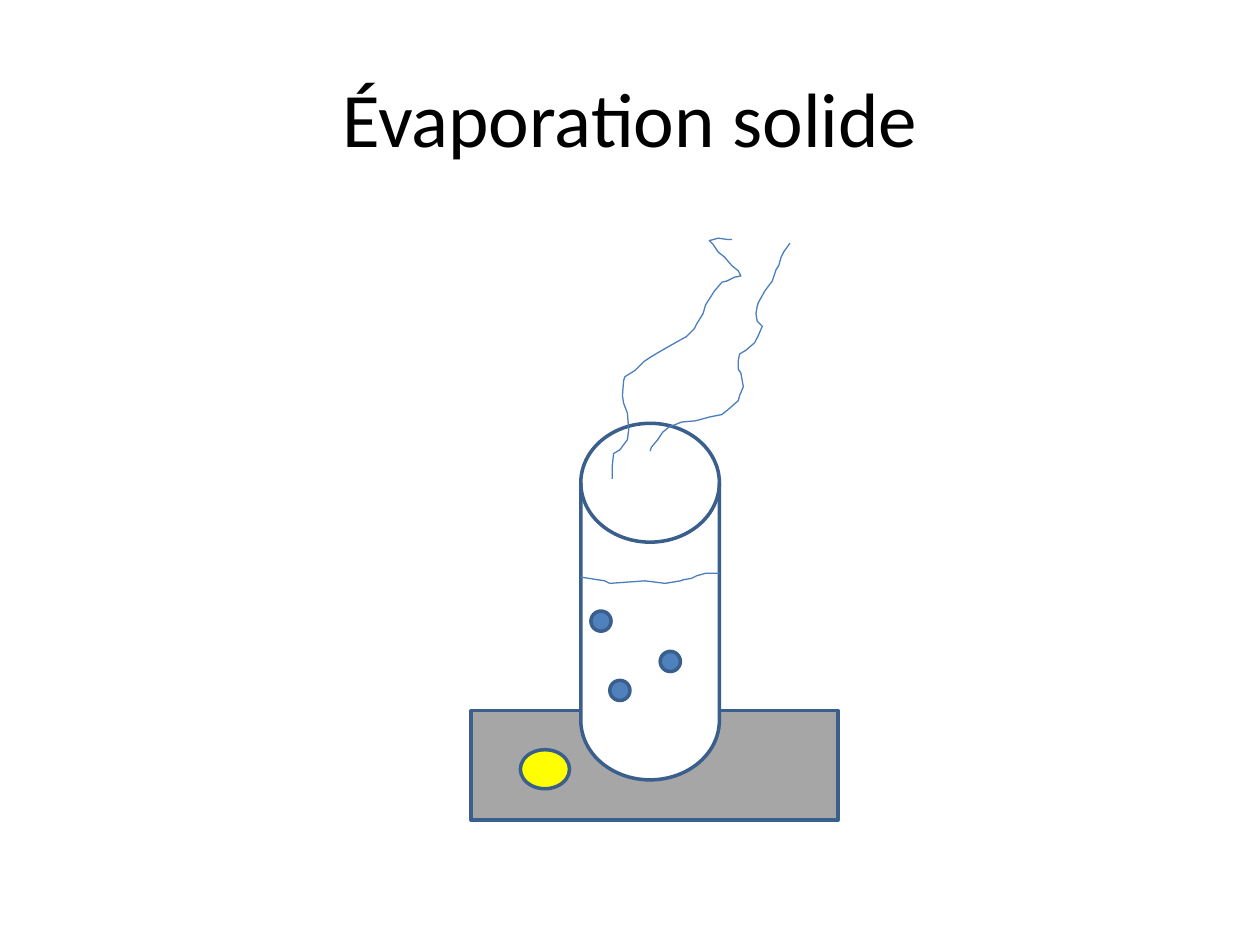
"""Build the slide that shows evaporation from a heated vessel."""
import pptx
import pptx.util
import pptx.dml.color
import pptx.enum.shapes
import pptx.enum.text

Inches = pptx.util.Inches
Kind = pptx.enum.shapes.MSO_SHAPE


def color(hex_value):
    """Return the colour of a hex string."""
    return pptx.dml.color.RGBColor.from_string(hex_value)


class Sketch:
    """Hold the style and the current slide."""

    outline, outline_width = "3A5F8C", 2
    stroke, stroke_width = "4B7EBC", 0.75
    title_font = {"name": "Calibri", "size": pptx.util.Pt(44), "bold": False}
    title_color = "000000"

    def __init__(self, slide):
        """Keep the slide to draw on."""
        self.slide = slide

    def title(self, wording, *box):
        """Fill, place and format the title."""
        heading = self.slide.shapes.title
        places = dict(zip(("left", "top", "width", "height"), map(Inches, box)))
        for name, value in places.items():
            setattr(heading, name, value)
        heading.text_frame.vertical_anchor = pptx.enum.text.MSO_ANCHOR.MIDDLE
        line = heading.text_frame.paragraphs[0]
        line.alignment = pptx.enum.text.PP_ALIGN.CENTER
        run = line.add_run()
        run.text = wording
        for name, value in self.title_font.items():
            setattr(run.font, name, value)
        run.font.color.rgb = color(self.title_color)

    def pen(self, shape, line_color, width):
        """Set the line of a shape and drop its shadow."""
        shape.shadow.inherit = False
        shape.line.color.rgb = color(line_color)
        shape.line.width = pptx.util.Pt(width)

    def solid(self, kind, fill, *box):
        """Add a filled preset shape."""
        shape = self.slide.shapes.add_shape(kind, *map(Inches, box))
        shape.fill.solid()
        shape.fill.fore_color.rgb = color(fill)
        self.pen(shape, self.outline, self.outline_width)

    def curve(self, points):
        """Add an open hand-drawn line through points."""
        start, *rest = [(Inches(x), Inches(y)) for x, y in points]
        builder = self.slide.shapes.build_freeform(*start)
        builder.add_line_segments(rest, close=False)
        shape = builder.convert_to_shape()
        shape.fill.background()
        self.pen(shape, self.stroke, self.stroke_width)


WATER_LEVEL = [
    (4.61, 4.58), (4.8, 4.61), (4.84, 4.63), (5.12, 4.61), (5.28, 4.63),
    (5.4, 4.61), (5.43, 4.6), (5.49, 4.59), (5.53, 4.57), (5.6, 4.55), (5.71, 4.55),
]
LEFT_VAPOUR = [
    (4.86, 3.8), (4.86, 3.69), (4.87, 3.6), (4.92, 3.57), (4.98, 3.49),
    (4.99, 3.41), (4.98, 3.28), (4.95, 3.2), (4.94, 3.14), (4.95, 3.02),
    (4.96, 2.99), (5.04, 2.94), (5.11, 2.87), (5.17, 2.83), (5.22, 2.8),
    (5.36, 2.72), (5.45, 2.67), (5.51, 2.61), (5.53, 2.57), (5.58, 2.49),
    (5.6, 2.42), (5.67, 2.31), (5.73, 2.24), (5.77, 2.23), (5.83, 2.2),
    (5.88, 2.19), (5.86, 2.15), (5.81, 2.11), (5.75, 2.04), (5.7, 2),
    (5.66, 1.94), (5.63, 1.91), (5.7, 1.89), (5.77, 1.9), (5.81, 1.9),
]
RIGHT_VAPOUR = [
    (5.16, 3.58), (5.17, 3.55), (5.22, 3.49), (5.26, 3.43), (5.31, 3.39),
    (5.41, 3.35), (5.52, 3.34), (5.63, 3.31), (5.73, 3.29), (5.78, 3.25),
    (5.86, 3.18), (5.87, 3.14), (5.9, 3.07), (5.88, 2.96), (5.86, 2.93),
    (5.86, 2.86), (5.87, 2.81), (5.92, 2.78), (5.99, 2.72), (6.02, 2.66),
    (6.05, 2.59), (6.01, 2.55), (6, 2.49), (6.01, 2.43), (6.02, 2.4),
    (6.07, 2.31), (6.13, 2.23), (6.16, 2.14), (6.18, 2.11), (6.2, 2.04),
    (6.22, 2), (6.27, 1.93),
]
BUBBLES = [(4.84, 5.4), (5.24, 5.17), (4.69, 4.85)]
BUBBLE_SIZE = 0.16


def main():
    """Draw the heater, the vessel and the vapour."""
    deck = pptx.Presentation()
    deck.slide_width, deck.slide_height = Inches(10), Inches(7.5)
    sketch = Sketch(deck.slides.add_slide(deck.slide_layouts[5]))
    sketch.title("Évaporation solide", 0.5, 0.3, 9, 1.25)
    sketch.solid(Kind.RECTANGLE, "A6A6A6", 3.74, 5.64, 2.91, 0.87)
    sketch.solid(Kind.OVAL, "FFFF00", 4.13, 5.95, 0.39, 0.31)
    sketch.solid(Kind.FLOWCHART_MAGNETIC_DISK, "FFFFFF", 4.61, 3.36, 1.1, 2.83)
    sketch.curve(WATER_LEVEL)
    for left, top in BUBBLES:
        sketch.solid(Kind.OVAL, "4F81BD", left, top, BUBBLE_SIZE, BUBBLE_SIZE)
    for vapour in (LEFT_VAPOUR, RIGHT_VAPOUR):
        sketch.curve(vapour)
    deck.save("out.pptx")


if __name__ == "__main__":
    main()
